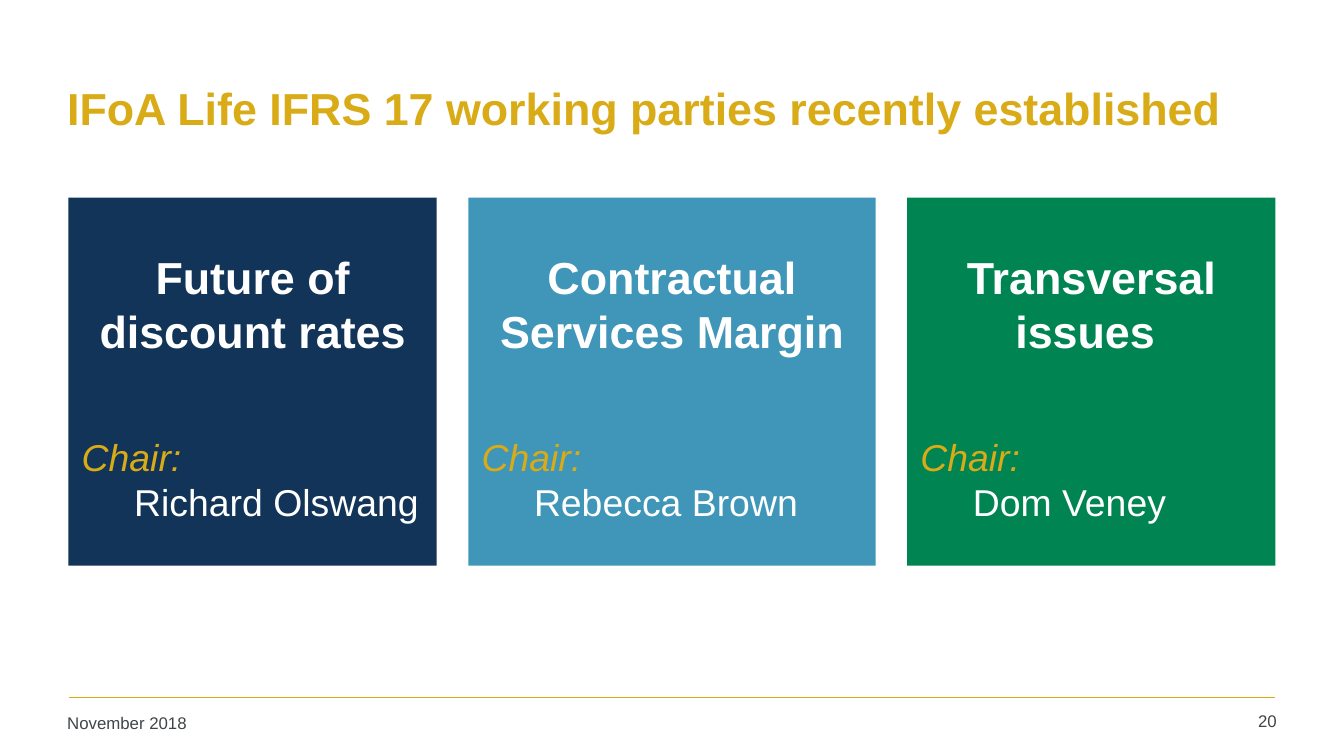
from lxml import etree
from pptx import Presentation
from pptx.dml.color import RGBColor
from pptx.enum import shapes, text
from pptx.oxml.ns import qn
from pptx.util import Inches, Pt

TITLE = "IFoA Life IFRS 17 working parties recently established"
DATE, PAGE = "November 2018", "20"
# topic, chair, fill colour, width
PARTIES = [
    ("Future of discount rates", "Richard Olswang", "113458", 2.74),
    ("Contractual Services Margin", "Rebecca Brown", "4096B8", 3.03),
    ("Transversal issues ", "Dom Veney", "008452", 2.74),
]
THEME = {
    "font": "Arial", "gold": "D9AB16", "white": "FFFFFF", "grey": "3F4548",
    "heading": 24, "body": 20, "footer": 9,
}
SLIDE_WIDTH = 10
SLIDE_HEIGHT = SLIDE_WIDTH * 9 / 16
LEFT, RIGHT = 0.51, 9.49
CARD_TOP, CARD_HEIGHT = 1.47, 2.74
RULE_Y = 5.19
NAME_TAB = 0.39


def set_frame(shape, margins, anchor):
    frame = shape.text_frame
    frame.word_wrap = True
    frame.vertical_anchor = anchor
    (frame.margin_left, frame.margin_top,
     frame.margin_right, frame.margin_bottom) = map(Inches, margins)
    return frame


def add_run(paragraph, words, size, color, bold=False, italic=False):
    run = paragraph.add_run()
    run.text = words
    font = run.font
    font.name, font.size = THEME["font"], Pt(size)
    font.bold, font.italic = bold, italic
    font.color.rgb = RGBColor.from_string(color)


def add_label(slide, box, words, size, color, bold=False,
              align=text.PP_ALIGN.LEFT, anchor=text.MSO_ANCHOR.TOP):
    shape = slide.shapes.add_textbox(*map(Inches, box))
    frame = set_frame(shape, (0.07, 0.04, 0.07, 0.04), anchor)
    paragraph = frame.paragraphs[0]
    paragraph.alignment = align
    add_run(paragraph, words, size, color, bold)


def add_tab_stop(paragraph, position):
    tabs = etree.SubElement(paragraph._p.get_or_add_pPr(), qn("a:tabLst"))
    etree.SubElement(tabs, qn("a:tab"), pos=str(Inches(position)), algn="l")


def add_card(slide, left, width, topic, chair, fill):
    card = slide.shapes.add_shape(
        shapes.MSO_SHAPE.RECTANGLE,
        *map(Inches, (left, CARD_TOP, width, CARD_HEIGHT)))
    card.shadow.inherit = False
    card.fill.solid()
    card.fill.fore_color.rgb = RGBColor.from_string(fill)
    card.line.fill.background()
    frame = set_frame(card, (0.1, 0.39, 0.1, 0.05), text.MSO_ANCHOR.TOP)

    heading = frame.paragraphs[0]
    role, name = frame.add_paragraph(), frame.add_paragraph()
    add_tab_stop(name, NAME_TAB)
    heading.alignment = text.PP_ALIGN.CENTER
    heading.space_after = Pt(41)
    role.alignment = name.alignment = text.PP_ALIGN.LEFT
    add_run(heading, topic, THEME["heading"], THEME["white"], bold=True)
    add_run(role, "Chair:", THEME["body"], THEME["gold"], italic=True)
    add_run(name, "\t" + chair, THEME["body"], THEME["white"])


def add_footer_rule(slide):
    rule = slide.shapes.add_connector(
        shapes.MSO_CONNECTOR.STRAIGHT,
        *map(Inches, (LEFT, RULE_Y, RIGHT, RULE_Y)))
    rule.line.color.rgb = RGBColor.from_string(THEME["gold"])
    rule.line.width = Pt(1)
    etree.SubElement(rule._element.spPr, qn("a:effectLst"))


def main():
    presentation = Presentation()
    presentation.slide_width = Inches(SLIDE_WIDTH)
    presentation.slide_height = Inches(SLIDE_HEIGHT)
    slide = presentation.slides.add_slide(presentation.slide_layouts[6])

    add_footer_rule(slide)
    add_label(slide, (0.43, 0.33, 9.07, 0.94), TITLE, THEME["heading"],
              THEME["gold"], bold=True, anchor=text.MSO_ANCHOR.MIDDLE)
    add_label(slide, (0.43, 5.26, 2.2, 0.27), DATE, THEME["footer"], THEME["grey"])
    add_label(slide, (8.86, 5.25, 0.71, 0.28), PAGE, THEME["footer"],
              THEME["grey"], align=text.PP_ALIGN.RIGHT)

    total_width = sum(width for *_, width in PARTIES)
    gap = (RIGHT - LEFT - total_width) / (len(PARTIES) - 1)
    left = LEFT
    for topic, chair, fill, width in PARTIES:
        add_card(slide, left, width, topic, chair, fill)
        left += width + gap

    presentation.save("out.pptx")


if __name__ == "__main__":
    main()
